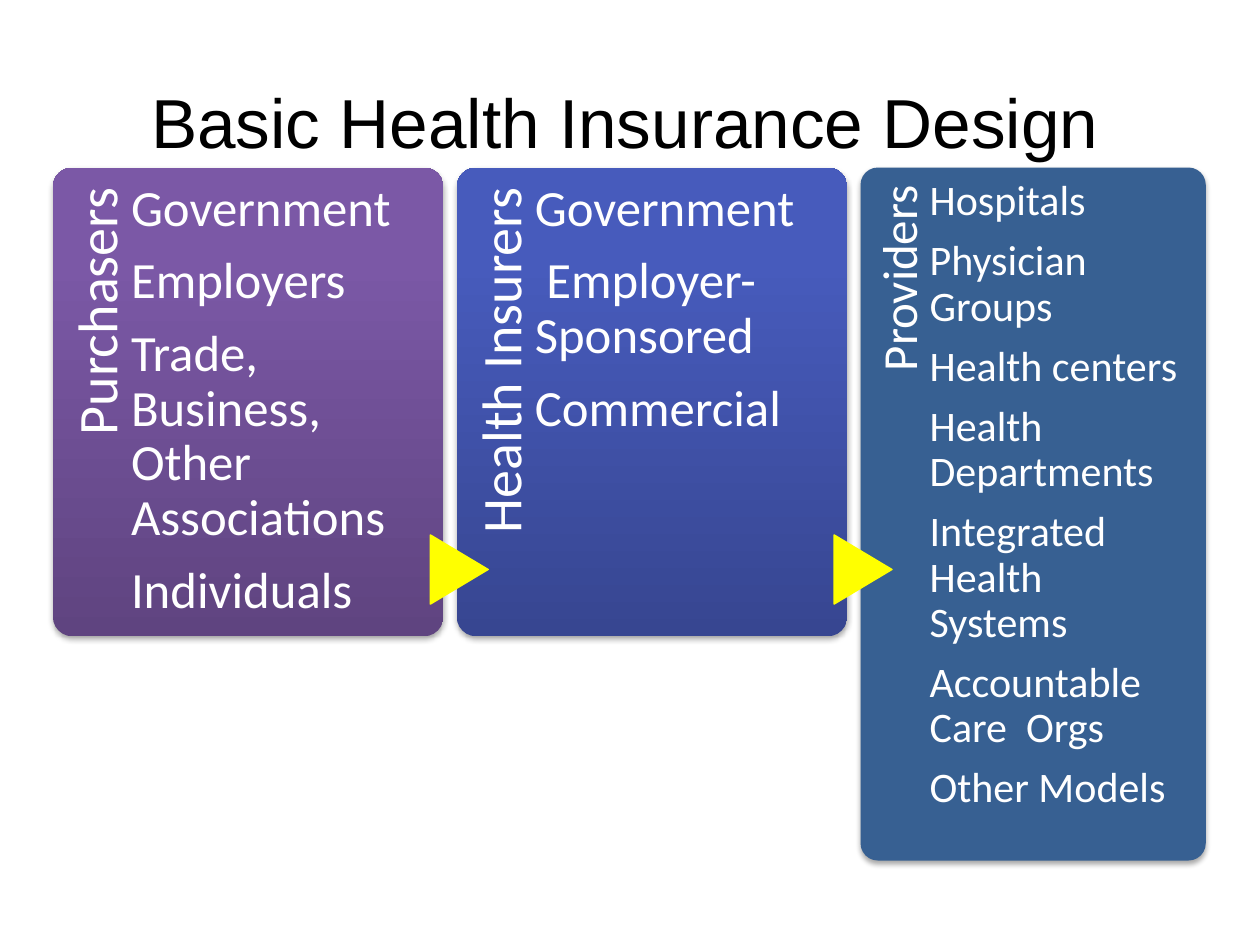
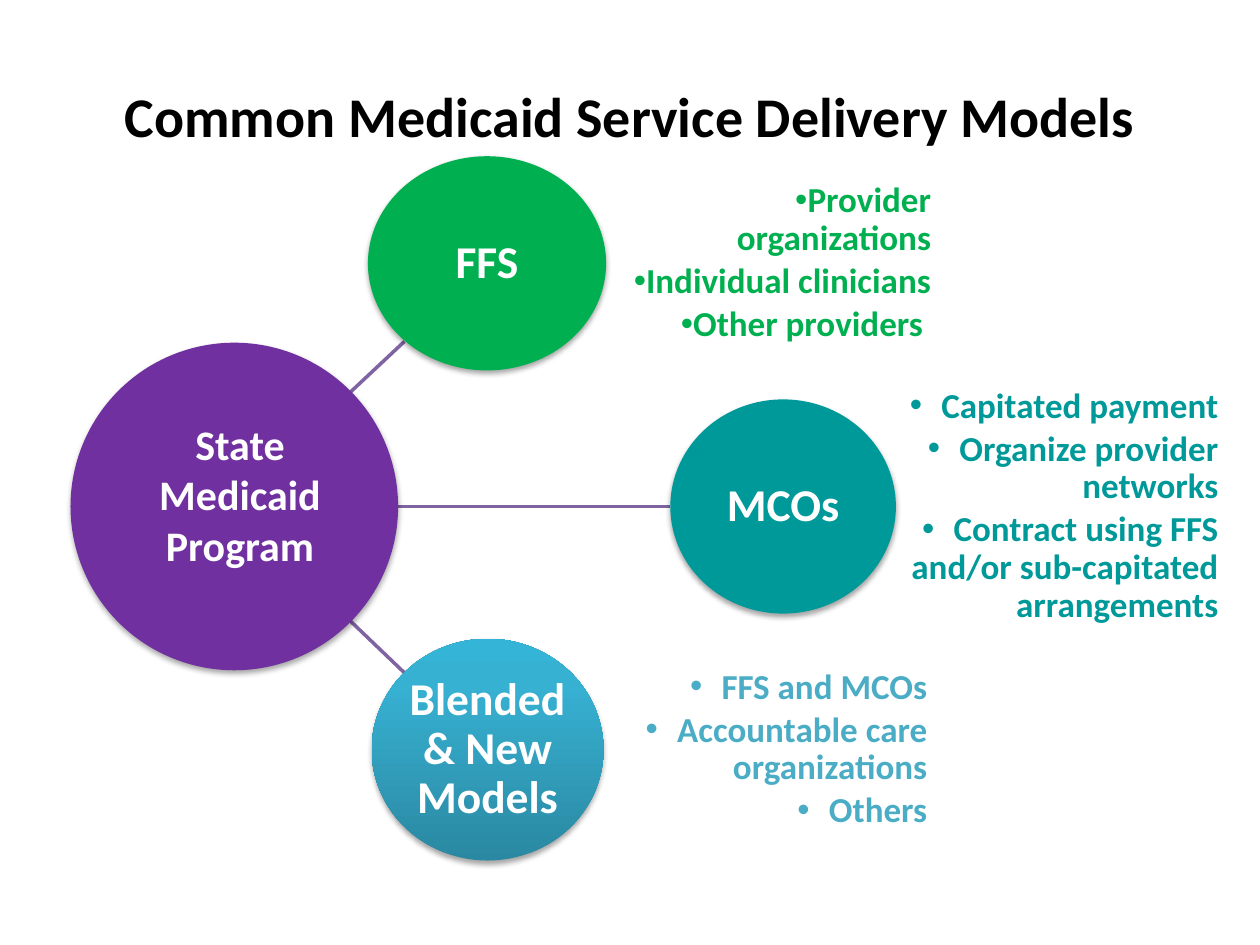
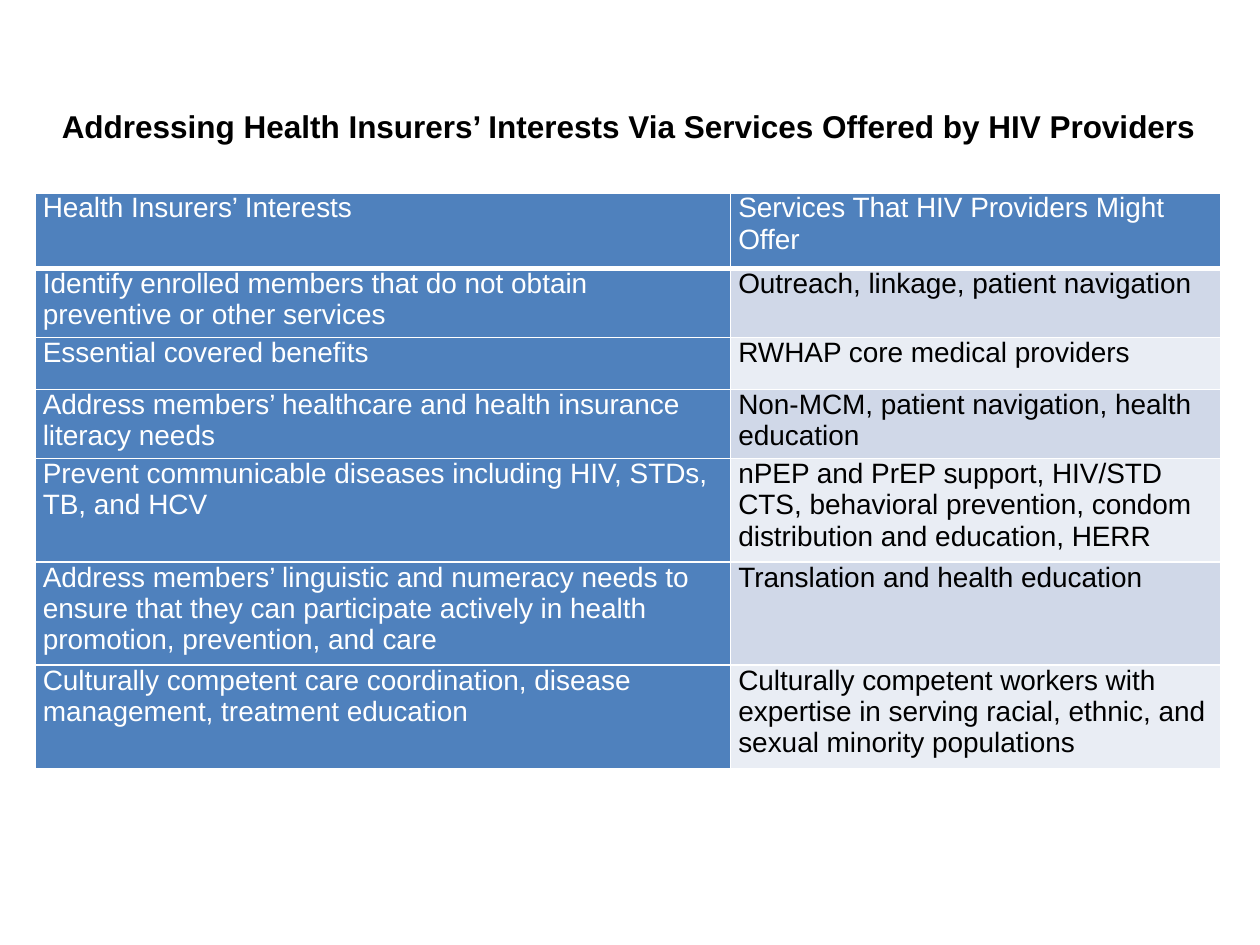
from copy import deepcopy

from lxml import etree
from pptx import Presentation
from pptx.dml.color import RGBColor
from pptx.enum.shapes import MSO_CONNECTOR, MSO_SHAPE
from pptx.enum.text import MSO_ANCHOR, PP_ALIGN
from pptx.oxml.ns import qn
from pptx.util import Inches, Pt

ROUND, OVAL = MSO_SHAPE.ROUNDED_RECTANGLE, MSO_SHAPE.OVAL
RECT, WEDGE = MSO_SHAPE.RECTANGLE, MSO_SHAPE.FLOWCHART_EXTRACT
LINE = MSO_CONNECTOR.STRAIGHT
TOP, MID = MSO_ANCHOR.TOP, MSO_ANCHOR.MIDDLE
LEFT, MEAN, RIGHT = PP_ALIGN.LEFT, PP_ALIGN.CENTER, PP_ALIGN.RIGHT

BLACK = RGBColor(0x00, 0x00, 0x00)
WHITE = RGBColor(0xFF, 0xFF, 0xFF)
GRAPE = RGBColor(0x5F, 0x44, 0x80)
LILAC = RGBColor(0x7B, 0x58, 0xA6)
MAUVE = RGBColor(0x7C, 0x57, 0xA8)
NAVY = RGBColor(0x37, 0x46, 0x91)
ROYAL = RGBColor(0x47, 0x5B, 0xBC)
COBALT = RGBColor(0x45, 0x5A, 0xBF)
STEEL = RGBColor(0x37, 0x60, 0x92)
YELLOW = RGBColor(0xFF, 0xFF, 0x00)
VIOLET = RGBColor(0x70, 0x30, 0xA0)
THREAD = RGBColor(0x80, 0x64, 0xA2)
GREEN = RGBColor(0x00, 0xB0, 0x50)
TEAL = RGBColor(0x00, 0x99, 0x99)
AQUA = RGBColor(0x4B, 0xAC, 0xC6)
DEEP = RGBColor(0x2A, 0x88, 0xA2)
SKY = RGBColor(0x37, 0xB1, 0xD2)
CYAN = RGBColor(0x34, 0xB4, 0xD6)
BLUE = RGBColor(0x4F, 0x81, 0xBD)
MIST = RGBColor(0xD0, 0xD8, 0xE8)
PALE = RGBColor(0xE9, 0xED, 0xF4)

COLS, ROWS = 100, 75
PLAIN = (1, 0.5, 1, 0.5)

PANELS = [
    ("Purchasers", (GRAPE, LILAC, MAUVE), 31, 37.2, 32, 29,
     ["Government", "Employers", "Trade, Business, Other Associations", "Individuals"]),
    ("Health Insurers", (NAVY, ROYAL, COBALT), 31, 37.2, 32, 29,
     ["Government", " Employer-Sponsored", "Commercial"]),
    ("Providers", STEEL, 27.4, 55, 28, 24,
     ["Hospitals", "Physician Groups", "Health centers", "Health Departments",
      "Integrated Health Systems", "Accountable Care  Orgs", "Other Models"]),
]

MODELS = [
    ("FFS", GREEN, GREEN, (29.2, 12.4, 18.9, 17), (45.6, 28.3), (2, -0.1),
     ["Provider organizations", "Individual clinicians", "Other providers "]),
    ("MCOs", TEAL, TEAL, (53.2, 31.7, 17.9, 17), (69.8, 26.9), (2.5, -2.5),
     ["Capitated payment", "Organize provider networks",
      "Contract using FFS and/or sub-capitated arrangements"]),
    ("Blended & New Models", (DEEP, SKY, CYAN), AQUA, (29.5, 50.7, 18.4, 17.6),
     (46, 27.6), (2.5, -2.5),
     ["FFS and MCOs", "Accountable care organizations", "Others"]),
]

LINKS = [(27.3, 48.8, 32.1, 53.4), (27.3, 40.2, 53.2, 40.2), (27.3, 31.6, 32.1, 27.1)]

SERVICES = [
    ("Health Insurers’ Interests", "Services That HIV Providers Might Offer"),
    ("Identify enrolled members that do not obtain preventive or other services",
     "Outreach, linkage, patient navigation"),
    ("Essential covered benefits", "RWHAP core medical providers"),
    ("Address members’ healthcare and health insurance literacy needs",
     "Non-MCM, patient navigation, health education"),
    ("Prevent communicable diseases including HIV, STDs, TB, and HCV",
     "nPEP and PrEP support, HIV/STD CTS, behavioral prevention, "
     "condom distribution and education, HERR"),
    ("Address members’ linguistic and numeracy needs to ensure that they can "
     "participate actively in health promotion, prevention, and care",
     "Translation and health education"),
    ("Culturally competent care coordination, disease management, treatment education",
     "Culturally competent workers with expertise in serving racial, ethnic, "
     "and sexual minority populations"),
]


def put(item, **values):
    """Set each named value on the item."""
    for name, value in values.items():
        setattr(item, name, value)


def node(parent, tag, **values):
    """Add a drawing element with its attributes."""
    return etree.SubElement(parent, qn(f"a:{tag}"), {k: str(v) for k, v in values.items()})


class Deck:
    """Holds the deck style and the current slide."""

    def __init__(self):
        """Start a deck with a 100 by 75 grid."""
        self.deck = Presentation()
        put(self.deck, slide_width=Inches(10), slide_height=Inches(7.5))
        self.slide = None

    def col(self, count):
        """Turn columns into a length."""
        return round(self.deck.slide_width * count / COLS)

    def row(self, count):
        """Turn rows into a length."""
        return round(self.deck.slide_height * count / ROWS)

    def area(self, x, y, w, h):
        """Turn a grid area into lengths."""
        return self.col(x), self.row(y), self.col(w), self.row(h)

    def page(self, title, area, size, face, bold):
        """Add a slide with its title."""
        self.slide = self.deck.slides.add_slide(self.deck.slide_layouts[6])
        self.text(area, [title], size, BLACK, face=face, bold=bold, align=MEAN, anchor=MID)

    def fill(self, frame, lines, size, color, face="Calibri", bold=False, align=LEFT,
             anchor=TOP, inset=PLAIN, lead=1.0, gap=0, hang=None):
        """Fill a text frame with paragraphs."""
        sides = ("margin_left", "margin_top", "margin_right", "margin_bottom")
        put(frame, word_wrap=True, vertical_anchor=anchor,
            **{side: self.col(part) for side, part in zip(sides, inset)})
        for i, line in enumerate(lines):
            para = frame.add_paragraph() if i else frame.paragraphs[0]
            if hang:
                props = para._p.get_or_add_pPr()
                props.set("marL", str(self.col(hang[0])))
                props.set("indent", str(self.col(hang[1])))
                node(props, "buFont", typeface="Arial")
                node(props, "buChar", char="•")
                para.level = 1
            put(para, alignment=align, line_spacing=lead,
                space_before=Pt(0), space_after=Pt(gap * size))
            run = para.add_run()
            run.text = line
            put(run.font, name=face, size=Pt(size), bold=bold)
            run.font.color.rgb = color

    def text(self, area, lines, size, color, turn=0, **style):
        """Add a text box."""
        box = self.slide.shapes.add_textbox(*self.area(*area))
        box.rotation = turn
        self.fill(box.text_frame, lines, size, color, **style)

    def shape(self, kind, area, fill, shade=False, turn=0, edge=None):
        """Add a preset shape with a flat or graded fill."""
        item = self.slide.shapes.add_shape(kind, *self.area(*area))
        item.rotation = turn
        if isinstance(fill, tuple) and not isinstance(fill, RGBColor):
            item.fill.gradient()
            item.fill.gradient_angle = 90
            stops = item._element.spPr.find(".//" + qn("a:gsLst"))
            stops.append(deepcopy(stops[-1]))
            for stop, color, spot in zip(item.fill.gradient_stops, fill, (0, 0.8, 1)):
                stop.color.rgb = color
                stop.position = spot
        else:
            item.fill.solid()
            item.fill.fore_color.rgb = fill
        if edge:
            item.line.color.rgb = edge
            item.line.width = Pt(0.75)
        else:
            item.line.fill.background()
        item.shadow.inherit = False
        if shade:
            cast = node(item._element.spPr.find(qn("a:effectLst")), "outerShdw",
                        blurRad=Pt(3.1), dist=Pt(1.8), dir=5400000, rotWithShape=0)
            node(node(cast, "srgbClr", val=BLACK), "alpha", val=35000)
        return item

    def link(self, x1, y1, x2, y2):
        """Add a straight line."""
        item = self.slide.shapes.add_connector(
            LINE, self.col(x1), self.row(y1), self.col(x2), self.row(y2))
        item.line.color.rgb = THREAD
        item.line.width = Pt(2)
        node(item._element.spPr, "effectLst")

    def panel(self, x, y, name, fill, w, h, big, small, lines):
        """Add a panel with a side label and a list."""
        style = {"lead": 0.9, "gap": 0.35}
        self.shape(ROUND, (x, y, w, h), fill, shade=True).adjustments[0] = 0.05
        wide, tall = 0.2 * w, 0.82 * h
        self.text((x + (wide - tall) / 2, y + (tall - wide) / 2, tall, wide), [name], big,
                  WHITE, turn=270, align=RIGHT, inset=(0, big * 0.04, big * 0.05, 0), **style)
        self.text((x + wide, y, 0.745 * w, h), lines, small, WHITE,
                  inset=(0, small * 0.04, 0, 0), **style)

    def table(self, area, cols, rows, data):
        """Add a table with a blue first column and banded rows."""
        grid = self.slide.shapes.add_table(len(rows), len(cols), *self.area(*area)).table
        for item, wide in zip(grid.columns, cols):
            item.width = self.col(wide)
        for item, tall in zip(grid.rows, rows):
            item.height = self.row(tall)
        for r, line in enumerate(data):
            for c, words in enumerate(line):
                cell = grid.cell(r, c)
                head = r == 0 or c == 0
                props = cell._tc.get_or_add_tcPr()
                for side in "LRTB":
                    thick = 3 if r == 0 and side == "B" else 1
                    edge = node(props, f"ln{side}", w=Pt(thick))
                    node(node(edge, "solidFill"), "srgbClr", val=WHITE)
                cell.fill.solid()
                cell.fill.fore_color.rgb = BLUE if head else MIST if r % 2 else PALE
                self.fill(cell.text_frame, [words], 16, WHITE if head else BLACK, face="Arial")
                put(cell, margin_left=self.col(0.6), margin_right=self.col(0.6),
                    margin_top=0, margin_bottom=0)


def design(deck):
    """Build the insurance design slide."""
    deck.page("Basic Health Insurance Design", (5, 6.7, 89.2, 5.8), 39.6, "Arial", False)
    for i, panel in enumerate(PANELS):
        x = 4.2 + 32.05 * i
        deck.panel(x, 13.3, *panel)
        if i:
            deck.shape(WEDGE, (x - 2.55, 42.9, 5.5, 4.6), YELLOW, turn=90, edge=YELLOW)


def models(deck):
    """Build the delivery models slide."""
    deck.page("Common Medicaid Service Delivery Models", (4, 5.8, 92, 6.6), 32, "Calibri", True)
    for ends in LINKS:
        deck.link(*ends)
    deck.shape(OVAL, (5.6, 27.2, 26, 26), VIOLET, shade=True)
    for name, fill, ink, area, (x, w), hang, lines in MODELS:
        disc = deck.shape(OVAL, area, fill, shade=True)
        deck.fill(disc.text_frame, [name], 26, WHITE, bold=True, align=MEAN, anchor=MID,
                  inset=(0.2,) * 4, lead=0.9)
        deck.text((x, area[1], w, area[3]), lines, 20, ink, bold=True, align=RIGHT,
                  anchor=MID, inset=(0,) * 4, lead=0.9, gap=0.15, hang=hang)
    hub = deck.shape(RECT, (11.4, 32.7, 15.3, 13.1), VIOLET)
    deck.fill(hub.text_frame, ["State Medicaid Program"], 24, WHITE, bold=True, align=MEAN)


def services(deck):
    """Build the services table slide."""
    deck.page("Addressing Health Insurers’ Interests Via Services Offered by HIV Providers",
              (3.9, 6.7, 92, 6.6), 18, "Arial", True)
    deck.table((2.8, 15.3, 94.1, 45.7), (55.2, 38.9), (6, 5.5, 4.1, 5.5, 8.2, 8.2, 8.2), SERVICES)


def main():
    """Build and save the deck."""
    deck = Deck()
    for build in (design, models, services):
        build(deck)
    deck.deck.save("out.pptx")


if __name__ == "__main__":
    main()
